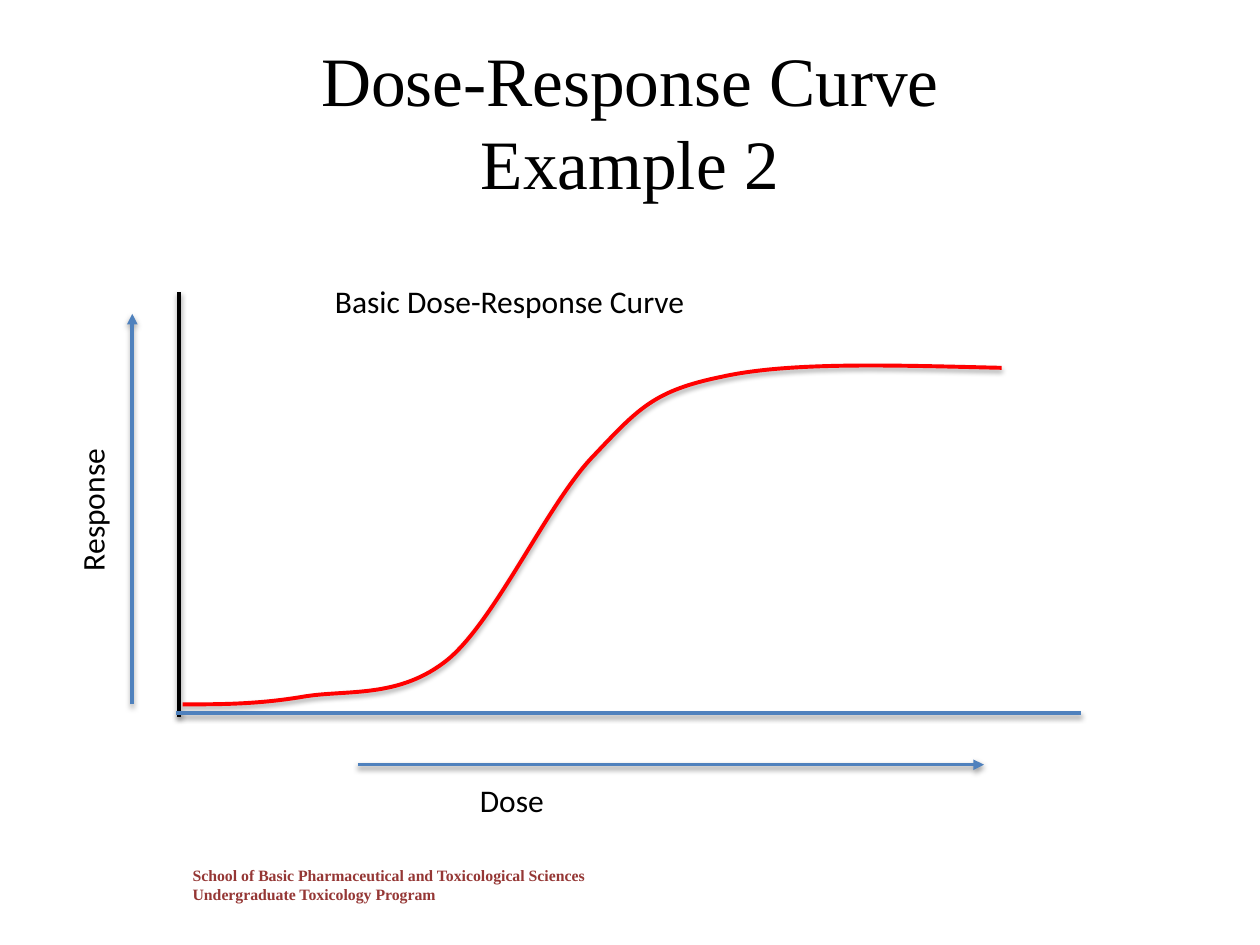
from dataclasses import dataclass

import pptx
import pptx.dml.color
import pptx.enum.shapes
import pptx.enum.text
import pptx.oxml.ns
import pptx.util
from lxml import etree

Pt = pptx.util.Pt
qn = pptx.oxml.ns.qn
ALIGN = pptx.enum.text.PP_ALIGN
ANCHOR = pptx.enum.text.MSO_ANCHOR

COLORS = {"ink": "000000", "blue": "4F81BD", "red": "FF0000", "wine": "953735"}
SERIF, SANS = "Times New Roman", "Calibri"


@dataclass
class Label:
    text: str
    box: tuple[float, float, float, float]
    turn: int = 0


@dataclass
class Line:
    start: tuple[float, float]
    end: tuple[float, float]
    color: str
    arrow: bool = False


LABELS = [
    Label("Basic Dose-Response Curve", (184.3, 157.7, 216.7, 28.8)),
    Label("Response", (10.1, 276.5, 85, 28.8), 270),
    Label("Dose", (267.1, 442.8, 51.8, 28.8)),
]
LINES = [
    Line((75.6, 402.5), (75.6, 179.3), "blue", True),
    Line((102.2, 409.7), (102.2, 167), "ink"),
    Line((100.8, 407.5), (617.8, 407.5), "blue"),
    Line((204.5, 437), (562.3, 437), "blue", True),
]
# Start of the curve, then two control points and an end for each piece
CURVE = [
    (104.4, 402.5),
    (126, 402.5), (146.9, 402.5), (172.8, 398.2),
    (198, 393.8), (228.2, 399.6), (256.3, 376.6),
    (283.7, 353.5), (313.2, 287.3), (339.1, 260.6),
    (365, 233.3), (373.7, 223.2), (412.6, 215.3),
    (451.4, 206.6), (511.9, 208.8), (572.4, 210.2),
]


def paint(color, key: str) -> None:
    color.rgb = pptx.dml.color.RGBColor.from_string(COLORS[key])


def shade(shape, alpha: int, dist: float) -> None:
    """Add a soft shadow straight below the shape."""
    effects = etree.SubElement(shape._element.spPr, qn("a:effectLst"))
    shadow = etree.SubElement(
        effects, qn("a:outerShdw"), blurRad=str(Pt(3.1)), dist=str(Pt(dist)),
        dir="5400000", rotWithShape="0")
    tone = etree.SubElement(shadow, qn("a:srgbClr"), val=COLORS["ink"])
    etree.SubElement(tone, qn("a:alpha"), val=str(alpha * 1000))


def add_box(slide, box: tuple, wrap: bool):
    shape = slide.shapes.add_textbox(*map(Pt, box))
    shape.text_frame.word_wrap = wrap
    return shape


def add_run(para, text: str, font: str, size: float, color: str,
            bold: bool = False) -> None:
    run = para.add_run()
    run.text = text
    run.font.name, run.font.size, run.font.bold = font, Pt(size), bold
    paint(run.font.color, color)


def add_label(slide, label: Label) -> None:
    shape = add_box(slide, label.box, False)
    shape.rotation = label.turn
    add_run(shape.text_frame.paragraphs[0], label.text, SANS, 18, "ink")


def add_line(slide, line: Line) -> None:
    shape = slide.shapes.add_connector(
        pptx.enum.shapes.MSO_CONNECTOR.STRAIGHT,
        *map(Pt, line.start + line.end))
    shape.line.width = Pt(2)
    paint(shape.line.color, line.color)
    if line.arrow:
        etree.SubElement(shape.line._get_or_add_ln(), qn("a:tailEnd"),
                         type="triangle")
    shade(shape, 38, 1.6)


def add_curve(slide, points: list) -> None:
    spots = [(Pt(x), Pt(y)) for x, y in points]
    pen = slide.shapes.build_freeform(*spots[0])
    pen.add_line_segments(spots[1:], close=False)
    shape = pen.convert_to_shape()
    # Turn each three straight steps into one Bezier piece
    path = next(shape._element.iter(qn("a:path")))
    steps = path.findall(qn("a:lnTo"))
    for i in range(0, len(steps), 3):
        piece = etree.SubElement(path, qn("a:cubicBezTo"))
        for step in steps[i:i + 3]:
            piece.append(step[0])
            path.remove(step)
    shape.fill.background()
    shape.line.width = Pt(2.25)
    paint(shape.line.color, "red")
    shade(shape, 35, 1.8)


def main() -> None:
    deck = pptx.Presentation()
    deck.slide_width, deck.slide_height = Pt(720), Pt(540)
    slide = deck.slides.add_slide(deck.slide_layouts[6])

    # Footer
    frame = add_box(slide, (103, 491, 516.2, 28.8), True).text_frame
    add_run(frame.paragraphs[0],
            "School of Basic Pharmaceutical and Toxicological Sciences",
            SERIF, 9, "wine", True)
    add_run(frame.add_paragraph(), "Undergraduate Toxicology Program",
            SERIF, 9, "wine", True)

    # Title
    frame = add_box(slide, (36, 21.6, 648, 90), True).text_frame
    frame.vertical_anchor = ANCHOR.MIDDLE
    frame.margin_top = Pt(8.4)
    para = frame.paragraphs[0]
    para.alignment = ALIGN.CENTER
    para.line_spacing = Pt(47.4)
    add_run(para, "Dose-Response Curve", SERIF, 39.6, "ink")
    para.add_line_break()
    add_run(para, "Example 2", SERIF, 39.6, "ink")

    # Axes, arrows, curve and labels
    for line in LINES[:2]:
        add_line(slide, line)
    add_curve(slide, CURVE)
    for line in LINES[2:]:
        add_line(slide, line)
    for label in LABELS:
        add_label(slide, label)

    deck.save("out.pptx")


if __name__ == "__main__":
    main()
